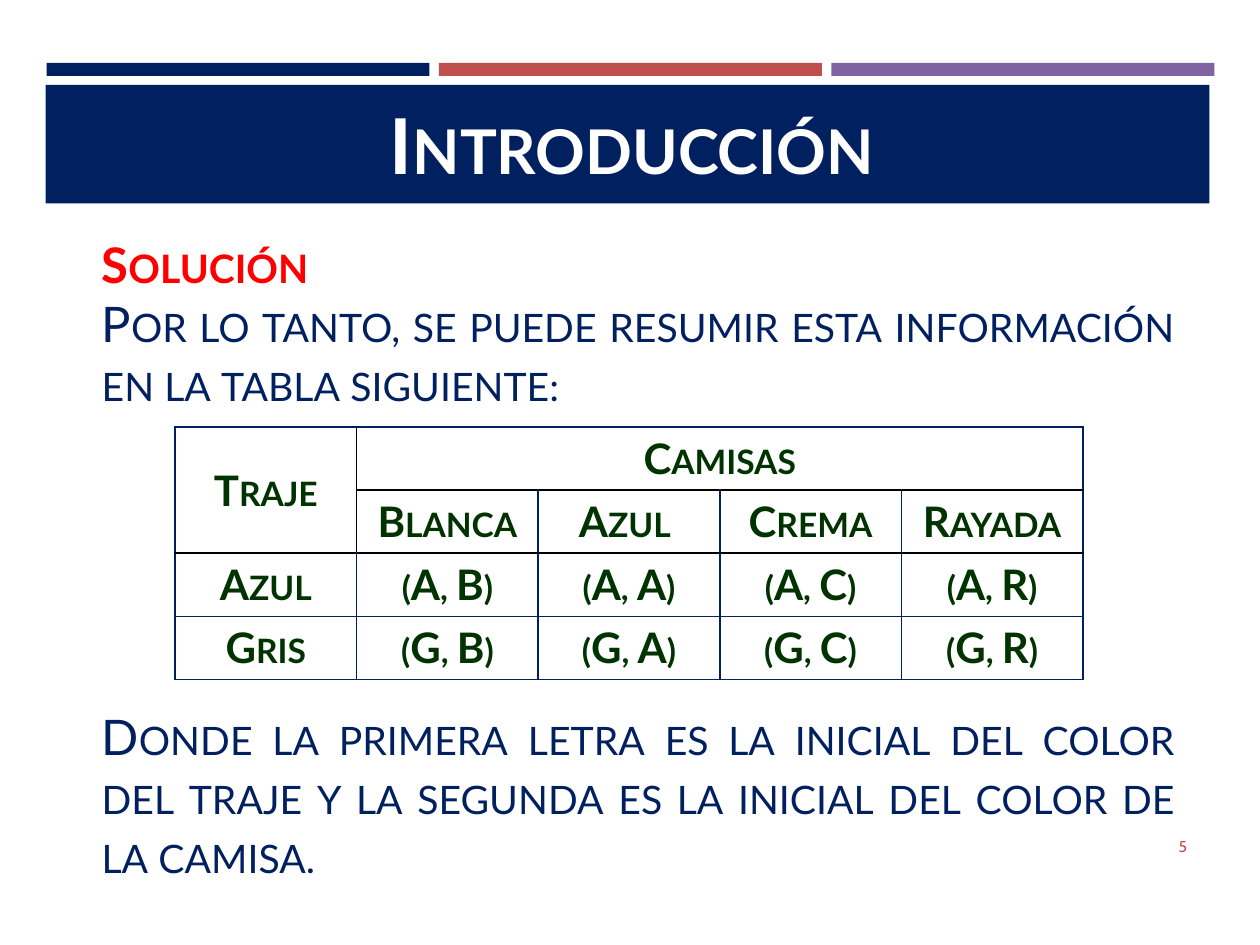
import pptx
import pptx.util
import pptx.dml.color
import pptx.enum.shapes
import pptx.enum.text
from lxml import etree

Cm, Pt = pptx.util.Cm, pptx.util.Pt
ALIGN = pptx.enum.text.PP_ALIGN
MID = pptx.enum.text.MSO_ANCHOR.MIDDLE
TOP = pptx.enum.text.MSO_ANCHOR.TOP
NAVY, BLACK = "002060", "000000"
NS = "http://schemas.openxmlformats.org/drawingml/2006/main"

BARS = [NAVY, "C0504D", "8064A2"]
BODY = [
    ("Solución", "FF0000", True, 0),
    ("Por lo tanto, se puede resumir esta información en la tabla siguiente:", NAVY, False, 0),
    ("Donde la primera letra es la inicial del color del traje y la segunda "
     "es la inicial del color de la camisa.", NAVY, False, 169),
]
ROWS = [
    ["Traje", "Camisas", "", "", ""],
    ["", "Blanca", "Azul ", "Crema", "Rayada"],
    ["Azul", "(A, B)", "(A, A)", "(A, C)", "(A, R)"],
    ["Gris", "(G, B)", "(G, A)", "(G, C)", "(G, R)"],
]
MERGES = [((0, 0), (1, 0)), ((0, 1), (0, 4))]


def tint(code):
    return pptx.dml.color.RGBColor.from_string(code)


def write(par, text, color, align, caps=True, **form):
    par.alignment = align
    run = par.add_run()
    run.text = text
    run.font.color.rgb = tint(color)
    for key, val in form.items():
        setattr(run.font, key, val)
    if caps:
        run._r.get_or_add_rPr().set("cap", "small")


def block(slide, x, y, w, h, color):
    rect = slide.shapes.add_shape(
        pptx.enum.shapes.MSO_SHAPE.RECTANGLE, Cm(x), Cm(y), Cm(w), Cm(h))
    rect.shadow.inherit = False
    rect.fill.solid()
    rect.fill.fore_color.rgb = tint(color)
    rect.line.fill.background()


def frame(slide, x, y, w, h, anchor):
    box = slide.shapes.add_textbox(Cm(x), Cm(y), Cm(w), Cm(h)).text_frame
    box.word_wrap = True
    box.vertical_anchor = anchor
    return box


def border(cell, edges):
    props = cell._tc.get_or_add_tcPr()
    for pos, (side, color) in enumerate(edges):
        line = etree.Element(f"{{{NS}}}ln{side}", w=str(Pt(1)))
        fill = etree.SubElement(line, f"{{{NS}}}solidFill")
        etree.SubElement(fill, f"{{{NS}}}srgbClr", val=color)
        props.insert(pos, line)


def side(row, col):
    return BLACK if col == 1 and row < 2 else NAVY


def level(row):
    return BLACK if row in (1, 2) else NAVY


def grid(slide):
    table = slide.shapes.add_table(
        len(ROWS), len(ROWS[0]), Cm(3.53), Cm(8.61), Cm(18.3), Cm(5.08)).table
    table.first_row = table.horz_banding = False
    for start, end in MERGES:
        table.cell(*start).merge(table.cell(*end))
    for r, row in enumerate(ROWS):
        for c, text in enumerate(row):
            cell = table.cell(r, c)
            cell.fill.background()
            cell.vertical_anchor = MID
            border(cell, [("L", side(r, c)), ("R", side(r, c + 1)),
                          ("T", level(r)), ("B", level(r + 1))])
            if text:
                write(cell.text_frame.paragraphs[0], text, "003300", ALIGN.CENTER,
                      name="Lato", size=Pt(24), bold=True)


def main():
    deck = pptx.Presentation()
    deck.slide_width, deck.slide_height = Cm(25.4), Cm(19.05)
    slide = deck.slides.add_slide(deck.slide_layouts[6])

    for i, color in enumerate(BARS):
        block(slide, 0.94 + i * 7.91, 1.27, 7.72, 0.26, color)
    block(slide, 0.92, 1.71, 23.46, 2.39, NAVY)

    title = frame(slide, 7.01, 1.8, 11.46, 2.21, MID)
    write(title.paragraphs[0], "Introducción", "FFFFFF", ALIGN.CENTER,
          name="Lato", size=Pt(44), bold=True)

    body = frame(slide, 1.5, 4.6, 22.43, 13.46, TOP)
    for i, (text, color, bold, gap) in enumerate(BODY):
        par = body.add_paragraph() if i else body.paragraphs[0]
        par.space_before = Pt(gap)
        par._p.get_or_add_pPr().set("marL", str(Cm(0.3)))
        write(par, text, color, ALIGN.JUSTIFY, name="Lato", size=Pt(28), bold=bold)

    grid(slide)

    page = frame(slide, 22, 16.54, 2.18, 1.02, MID)
    write(page.paragraphs[0], "5", "C0504D", ALIGN.RIGHT, caps=False,
          name="Cabin", size=Pt(9))
    deck.save("out.pptx")


if __name__ == "__main__":
    main()
